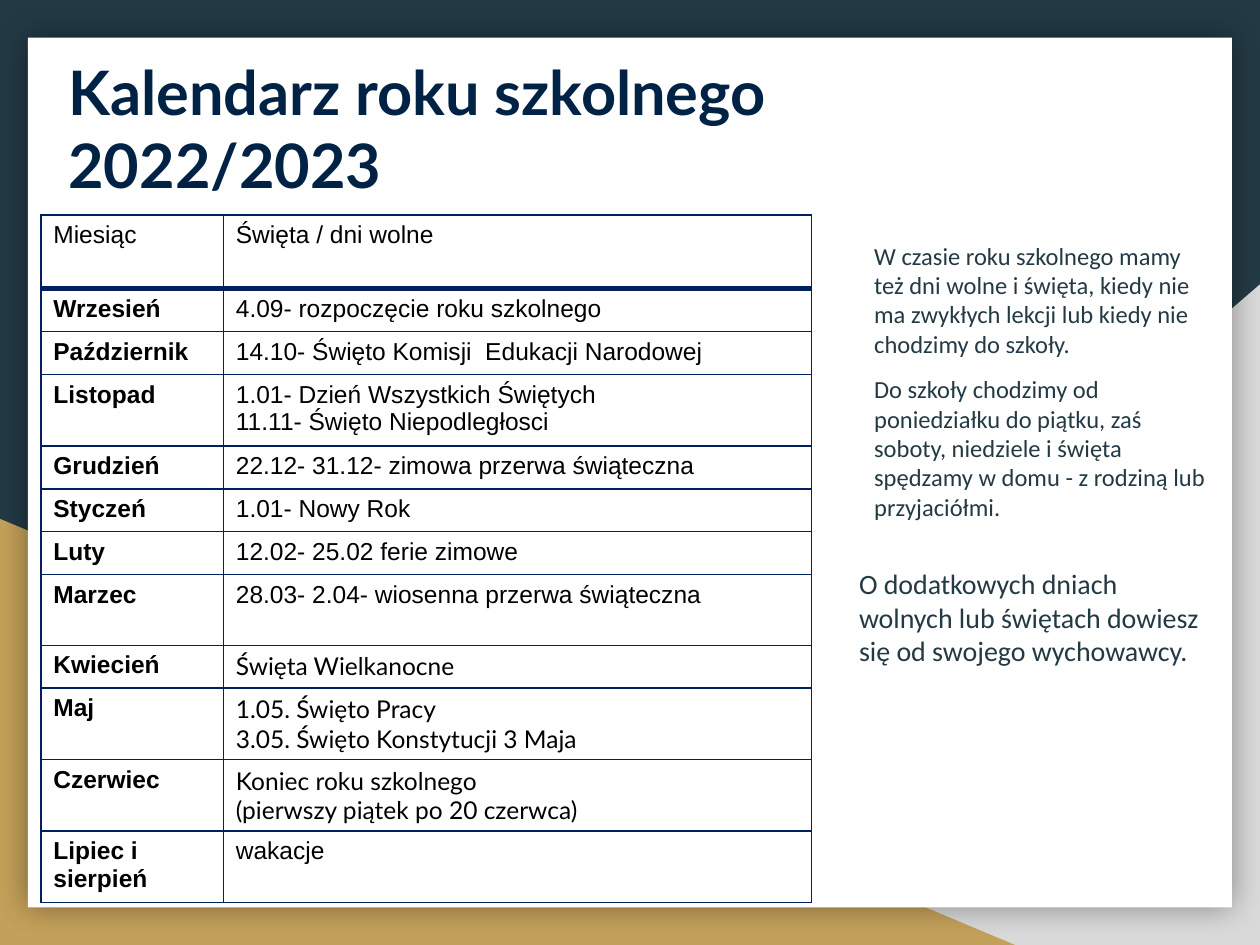
from lxml import etree
from pptx import Presentation
from pptx.dml.color import RGBColor
from pptx.enum import shapes, text
from pptx.oxml import ns
from pptx.util import Pt

COLORS = {
    "slate": "233A44",
    "grey": "D9D9D9",
    "gold": "C4A15A",
    "white": "FFFFFF",
    "black": "000000",
    "title": "002244",
    "border": "002060",
}

CALENDAR = [
    ("Miesiąc", ["Święta / dni wolne"], "Arial", 42),
    ("Wrzesień", ["4.09- rozpoczęcie roku szkolnego"], "Arial", 24.5),
    ("Październik", ["14.10- Święto Komisji  Edukacji Narodowej"], "Arial", 24.5),
    ("Listopad", ["1.01- Dzień Wszystkich Świętych",
                  "11.11- Święto Niepodległosci"], "Arial", 24.5),
    ("Grudzień", ["22.12- 31.12- zimowa przerwa świąteczna"], "Arial", 24.5),
    ("Styczeń", ["1.01- Nowy Rok"], "Arial", 24.5),
    ("Luty", ["12.02- 25.02 ferie zimowe"], "Arial", 24.5),
    ("Marzec", ["28.03- 2.04- wiosenna przerwa świąteczna"], "Arial", 40.5),
    ("Kwiecień", ["Święta Wielkanocne"], "Lato", 24.5),
    ("Maj", ["1.05. Święto Pracy", "3.05. Święto Konstytucji 3 Maja"], "Lato", 40.5),
    ("Czerwiec", ["Koniec roku szkolnego",
                  "(pierwszy piątek po 20 czerwca)"], "Lato", 40.5),
    ("Lipiec i sierpień", ["wakacje"], "Arial", 40.5),
]

NOTES = [
    ("W czasie roku szkolnego mamy też dni wolne i święta, kiedy nie ma "
     "zwykłych lekcji lub kiedy nie chodzimy do szkoły.", 14, 9, 8.64),
    ("Do szkoły chodzimy od poniedziałku do piątku, zaś soboty, niedziele i "
     "święta spędzamy w domu - z rodziną lub przyjaciółmi.", 14, 9, 8.64),
    ("O dodatkowych dniach wolnych lub świętach dowiesz się od swojego "
     "wychowawcy.", 16, 26, 0),
]


def color(name):
    return RGBColor.from_string(COLORS[name])


def add_run(paragraph, content, size, font, color_name, bold=False):
    run = paragraph.add_run()
    run.text = content
    run.font.size = Pt(size)
    run.font.name = font
    run.font.bold = bold
    run.font.color.rgb = color(color_name)


def add_block(slide, kind, box, fill):
    shape = slide.shapes.add_shape(kind, *map(Pt, box))
    shape.fill.solid()
    shape.fill.fore_color.rgb = color(fill)
    shape.line.fill.background()
    shape.shadow.inherit = False
    return shape


def add_glow_shadow(shape):
    effects = shape._element.spPr.find(ns.qn("a:effectLst"))
    shadow = etree.SubElement(effects, ns.qn("a:outerShdw"),
                              blurRad=str(Pt(18)), dist="0", dir="0")
    tint = etree.SubElement(shadow, ns.qn("a:srgbClr"), val=COLORS["black"])
    etree.SubElement(tint, ns.qn("a:alpha"), val="40000")


def add_background(slide):
    slide.background.fill.solid()
    slide.background.fill.fore_color.rgb = color("slate")
    triangle = shapes.MSO_SHAPE.RIGHT_TRIANGLE
    right = add_block(slide, triangle, (282, 162.5, 438, 377.5), "grey")
    right._element.spPr.xfrm.set("flipH", "1")
    add_block(slide, triangle, (0, 296.5, 580, 243.5), "gold")
    page = add_block(slide, shapes.MSO_SHAPE.RECTANGLE, (16, 21.5, 688, 497), "white")
    add_glow_shadow(page)


def add_text_frame(slide, box, margin):
    frame = slide.shapes.add_textbox(*map(Pt, box)).text_frame
    frame.word_wrap = True
    frame.margin_left = frame.margin_right = Pt(7.2)
    frame.margin_top = frame.margin_bottom = Pt(margin)
    return frame


def add_title(slide):
    frame = add_text_frame(slide, (32, 23, 591, 100), 3.6)
    frame.vertical_anchor = text.MSO_ANCHOR.MIDDLE
    add_run(frame.paragraphs[0], "Kalendarz roku szkolnego 2022/2023",
            35, "Lato", "title", True)


def set_borders(cell, widths):
    properties = cell._tc.get_or_add_tcPr()
    for side, width in widths.items():
        line = etree.SubElement(properties, ns.qn(f"a:ln{side}"), w=str(Pt(width)))
        fill = etree.SubElement(line, ns.qn("a:solidFill"))
        etree.SubElement(fill, ns.qn("a:srgbClr"), val=COLORS["border"])


def fill_cell(cell, lines, font, bold, borders):
    set_borders(cell, borders)
    cell.fill.solid()
    cell.fill.fore_color.rgb = color("white")
    frame = cell.text_frame
    for index, line in enumerate(lines):
        paragraph = frame.add_paragraph() if index else frame.paragraphs[0]
        add_run(paragraph, line, 14, font, "black", bold)


def add_calendar(slide):
    height = sum(row[-1] for row in CALENDAR)
    table = slide.shapes.add_table(len(CALENDAR), 2, Pt(23.3), Pt(123),
                                   Pt(440.5), Pt(height)).table
    table.first_row = table.horz_banding = False
    table.columns[0].width, table.columns[1].width = Pt(104.3), Pt(336.2)
    for index, (month, events, font, row_height) in enumerate(CALENDAR):
        table.rows[index].height = Pt(row_height)
        borders = {"L": 1, "R": 1, "T": 3 if index == 1 else 1,
                   "B": 3 if index == 0 else 1}
        fill_cell(table.cell(index, 0), [month], "Arial", index > 0, borders)
        fill_cell(table.cell(index, 1), events, font, False, borders)


def add_notes_column(slide):
    frame = add_text_frame(slide, (483.8, 130.3, 217.5, 284.5), 7.2)
    for index, (content, size, space, indent) in enumerate(NOTES):
        paragraph = frame.add_paragraph() if index else frame.paragraphs[0]
        paragraph.space_before = Pt(space)
        paragraph._p.get_or_add_pPr().set("marL", str(Pt(indent)))
        add_run(paragraph, content, size, "Calibri", "slate")


def main():
    presentation = Presentation()
    presentation.slide_width, presentation.slide_height = Pt(720), Pt(540)
    slide = presentation.slides.add_slide(presentation.slide_layouts[6])
    add_background(slide)
    add_title(slide)
    add_calendar(slide)
    add_notes_column(slide)
    presentation.save("out.pptx")


if __name__ == "__main__":
    main()
